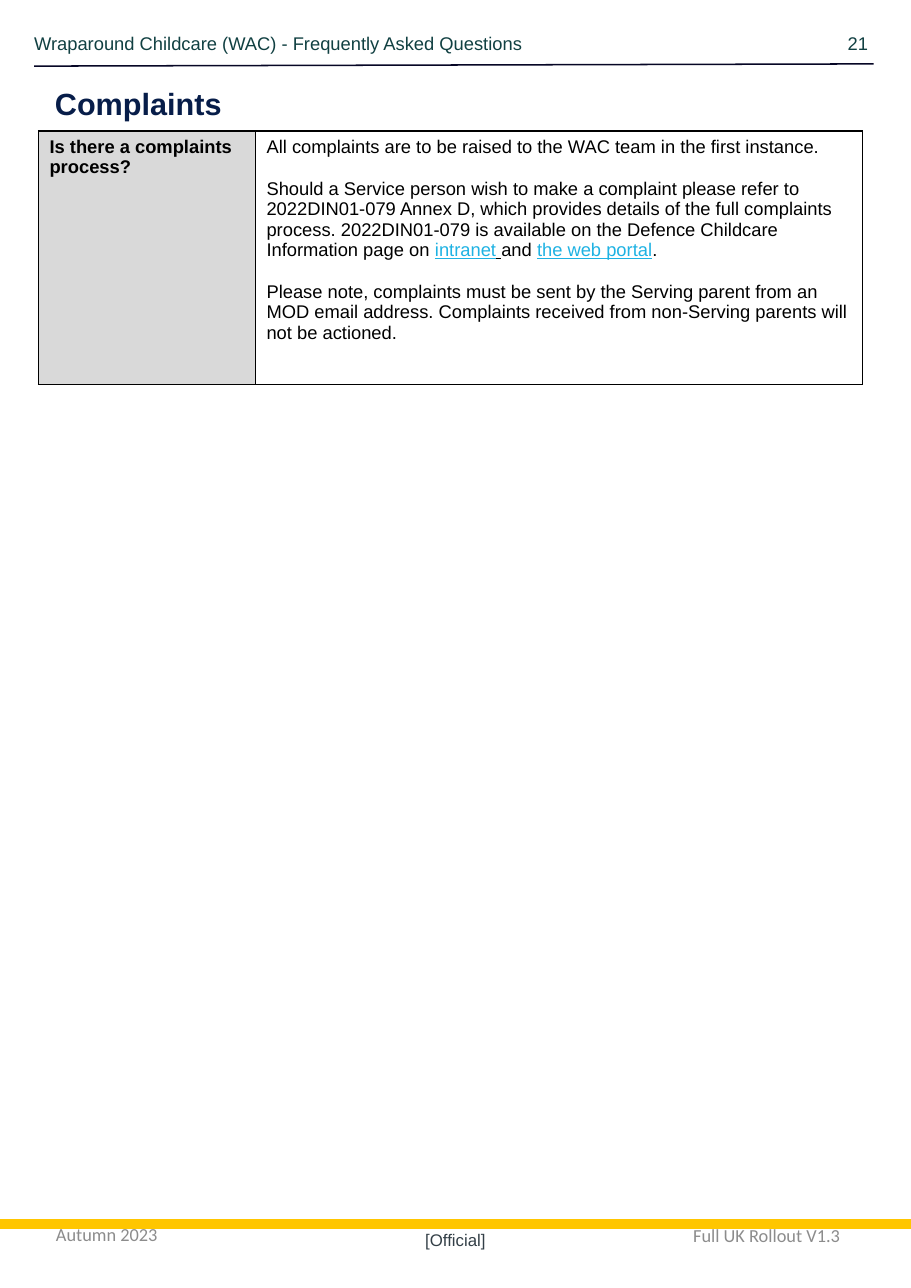
from lxml.etree import SubElement as Sub, Element as Elem
from pptx import Presentation as Deck
from pptx.dml.color import RGBColor as Rgb
from pptx.enum.shapes import MSO_CONNECTOR as Link
from pptx.enum.text import MSO_ANCHOR as Anchor, PP_ALIGN as Align
from pptx.oxml.ns import qn
from pptx.util import Inches, Pt

WIDE, HIGH = 8.27, 11.69
BLACK, GREY, TEAL, BLUE = "000000", "8C8C8C", "114042", "1EB2E3"
LEFT, MID, RIGHT = Align.LEFT, Align.CENTER, Align.RIGHT


def tint(code):
    return Rgb.from_string(code)


class Page:
    face = "Arial"
    size = 12

    def __init__(self, deck):
        self.slide = deck.slides.add_slide(deck.slide_layouts[6])

    def style(self, run, color=BLACK, size=None, face=None, bold=False, under=False):
        font = run.font
        font.name = face or self.face
        font.size = Pt(size or self.size)
        font.color.rgb = tint(color)
        font.bold = bold
        font.underline = under

    def label(self, text, box, color, align=LEFT, anchor=Anchor.TOP, inset=True, **look):
        frame = self.slide.shapes.add_textbox(*map(Inches, box)).text_frame
        frame.word_wrap = True
        frame.vertical_anchor = anchor
        if not inset:
            frame.margin_left = frame.margin_right = 0
            frame.margin_top = frame.margin_bottom = 0
        frame.text = text
        para = frame.paragraphs[0]
        para.alignment = align
        self.style(para.runs[0], color, **look)

    def rule(self, start, end, color, width):
        line = self.slide.shapes.add_connector(Link.STRAIGHT, *map(Inches, start + end))
        line.line.color.rgb = tint(color)
        line.line.width = Pt(width)
        Sub(line._element.spPr, qn("a:effectLst"))

    def border(self, cell, color=BLACK, width=1):
        props = cell._tc.get_or_add_tcPr()
        for spot, side in enumerate(("lnL", "lnR", "lnT", "lnB")):
            edge = Elem(qn(f"a:{side}"), w=str(Pt(width)))
            fill = Sub(edge, qn("a:solidFill"))
            Sub(fill, qn("a:srgbClr"), val=color)
            props.insert(spot, edge)

    def grid(self, box, cols, rows, fills, gap):
        table = self.slide.shapes.add_table(len(rows), len(cols), *map(Inches, box)).table
        table.first_row = table.horz_banding = False
        for col, width in zip(table.columns, cols):
            col.width = Inches(width)
        for r, row in enumerate(rows):
            for c, paras in enumerate(row):
                cell = table.cell(r, c)
                cell.fill.solid()
                cell.fill.fore_color.rgb = tint(fills[c])
                self.border(cell)
                self.fill_text(cell.text_frame, paras, gap)

    def fill_text(self, frame, paras, gap):
        for i, parts in enumerate(paras):
            para = frame.add_paragraph() if i else frame.paragraphs[0]
            para.space_before = Pt(gap if i else 0)
            for text, look in parts:
                run = para.add_run()
                run.text = text
                self.style(run, **look)


def main():
    deck = Deck()
    deck.slide_width, deck.slide_height = Inches(WIDE), Inches(HIGH)
    page = Page(deck)

    page.label("Wraparound Childcare (WAC) - Frequently Asked Questions",
               (0.31, 0.29, 6, 0.2), TEAL, inset=False)
    page.label("21", (6.88, 0.29, 1, 0.2), TEAL, RIGHT, inset=False)
    page.rule((WIDE, 11.11), (0, 11.11), "FFC600", 6)
    page.label("Complaints", (0.4, 0.72, 7.48, 0.44), "071D49", size=20, bold=True)

    plain, link = {}, {"color": BLUE, "under": True}
    ask = [[("Is there a complaints process?", {"bold": True})]]
    reply = [
        [("All complaints are to be raised to the WAC team in the first instance.", plain)],
        [("Should a Service person wish to make a complaint please refer to "
          "2022DIN01-079 Annex D, which provides details of the full complaints "
          "process. 2022DIN01-079 is available on the Defence Childcare "
          "Information page on ", plain),
         ("intranet", link), (" ", {"under": True}), ("and ", plain),
         ("the web portal", link), (".", plain)],
        [("Please note, complaints must be sent by the Serving parent from an "
          "MOD email address. Complaints received from non-Serving parents "
          "will not be actioned.", plain)],
    ]
    page.grid((0.35, 1.19, 7.48, 2.3), (1.97, 5.51), [(ask, reply)],
              ("D9D9D9", "FFFFFF"), 13.8)
    page.rule((0.31, 0.6), (7.93, 0.58), "060625", 1)

    page.label("Autumn 2023", (0.41, 10.89, 1.93, 0.62), GREY,
               anchor=Anchor.MIDDLE, face="Calibri")
    page.label("Full UK Rollout V1.3", (5.65, 10.9, 2.62, 0.62), GREY, MID,
               Anchor.MIDDLE, face="Calibri")
    page.label("[Official]", (0, 11.15, WIDE, 0.19), "333F47", MID,
               Anchor.BOTTOM, inset=False, size=11)

    deck.save("out.pptx")


if __name__ == "__main__":
    main()
